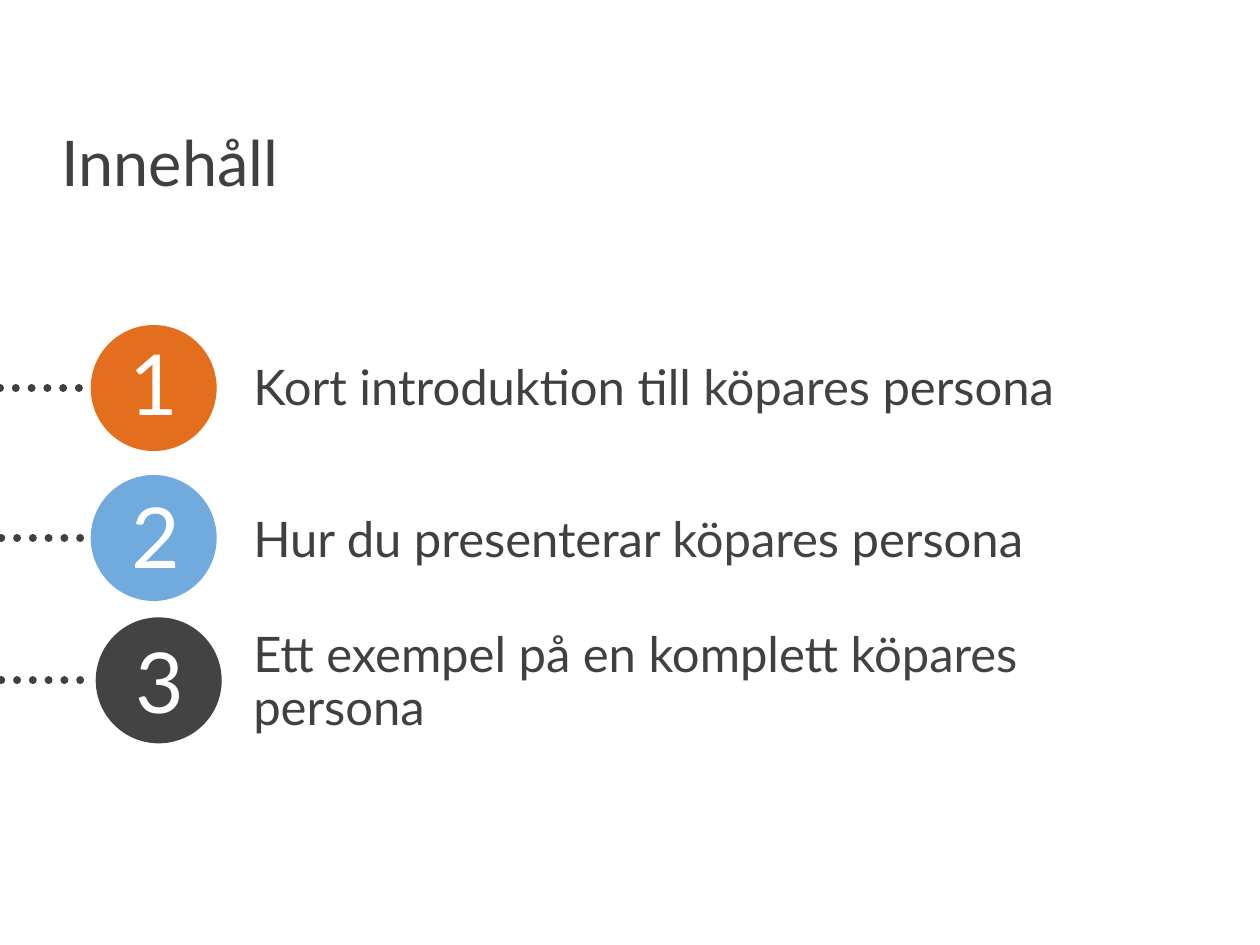
from lxml import etree
from pptx import Presentation
from pptx.dml.color import RGBColor
from pptx.enum.dml import MSO_LINE
from pptx.enum.shapes import MSO_CONNECTOR, MSO_SHAPE
from pptx.enum.text import MSO_ANCHOR, MSO_AUTO_SIZE, PP_ALIGN
from pptx.oxml.ns import qn
from pptx.util import Inches, Pt

ORANGE = RGBColor(0xE3, 0x6F, 0x1E)
BLUE = RGBColor(0x71, 0xAA, 0xDC)
DARK = RGBColor(0x43, 0x43, 0x43)
TEXT = RGBColor(0x40, 0x40, 0x40)
WHITE = RGBColor(0xFF, 0xFF, 0xFF)

prs = Presentation()
prs.slide_width, prs.slide_height = Inches(10), Inches(7.5)
s = prs.slides.add_slide(prs.slide_layouts[6])


def add_text(box, runs, size, frame={}, para={}):
    tf = s.shapes.add_textbox(*[Inches(v) for v in box]).text_frame
    tf.word_wrap = True
    for name, value in frame.items():
        setattr(tf, name, value)
    p = tf.paragraphs[0]
    for name, value in para.items():
        setattr(p, name, value)
    for text, color in runs:
        r = p.add_run()
        r.text = text
        r.font.name = "Lato"
        r.font.size = Pt(size)
        r.font.color.rgb = color


TIGHT = {"line_spacing": 0.9}
CENTRED = {"alignment": PP_ALIGN.CENTER}
GROW = {"auto_size": MSO_AUTO_SIZE.SHAPE_TO_FIT_TEXT}
ITEM = {
    "vertical_anchor": MSO_ANCHOR.MIDDLE,
    "margin_left": Inches(0.04),
    "margin_top": Inches(0.04),
    "margin_right": Inches(0.04),
    "margin_bottom": 0,
}

items = [
    ("Kort introduktion till ", ORANGE, 0.72, 2.58, 2.76, 0.68, 2.58, 0),
    ("Hur du presenterar ", BLUE, 0.72, 3.77, 3.96, 0.7, 3.8, 0.01),
    ("Ett exempel på en komplett ", DARK, 0.76, 4.9, 5.09, 0.73, 4.95, 0.01),
]

add_text((0.39, 1, 4.36, 0.68), [("Innehåll", TEXT)], 36, para=TIGHT)

for number, item in enumerate(items, 1):
    lead, color, left, top, text_top, num_left, num_top, line_left = item
    runs = [(lead, TEXT), ("köpares", DARK), (" persona", TEXT)]
    add_text((1.97, text_top, 7.31, 0.63), runs, 28, ITEM, TIGHT)

    y = Inches(top + 0.5)
    line = s.shapes.add_connector(
        MSO_CONNECTOR.STRAIGHT, Inches(line_left), y, Inches(line_left + 0.75), y
    )
    line.line.color.rgb = TEXT
    line.line.width = Pt(4.5)
    line.line.dash_style = MSO_LINE.ROUND_DOT
    sp_pr = line._element.spPr
    sp_pr.find(qn("a:ln")).set("cap", "rnd")
    etree.SubElement(sp_pr, qn("a:effectLst"))

    sp = s.shapes.add_shape(
        MSO_SHAPE.OVAL, Inches(left), Inches(top), Inches(1), Inches(1)
    )
    sp.shadow.inherit = False
    sp.fill.solid()
    sp.fill.fore_color.rgb = color
    sp.line.fill.background()

    add_text((num_left, num_top, 1.08, 0.91), [(str(number), WHITE)], 48, GROW, CENTRED)

prs.save("out.pptx")
